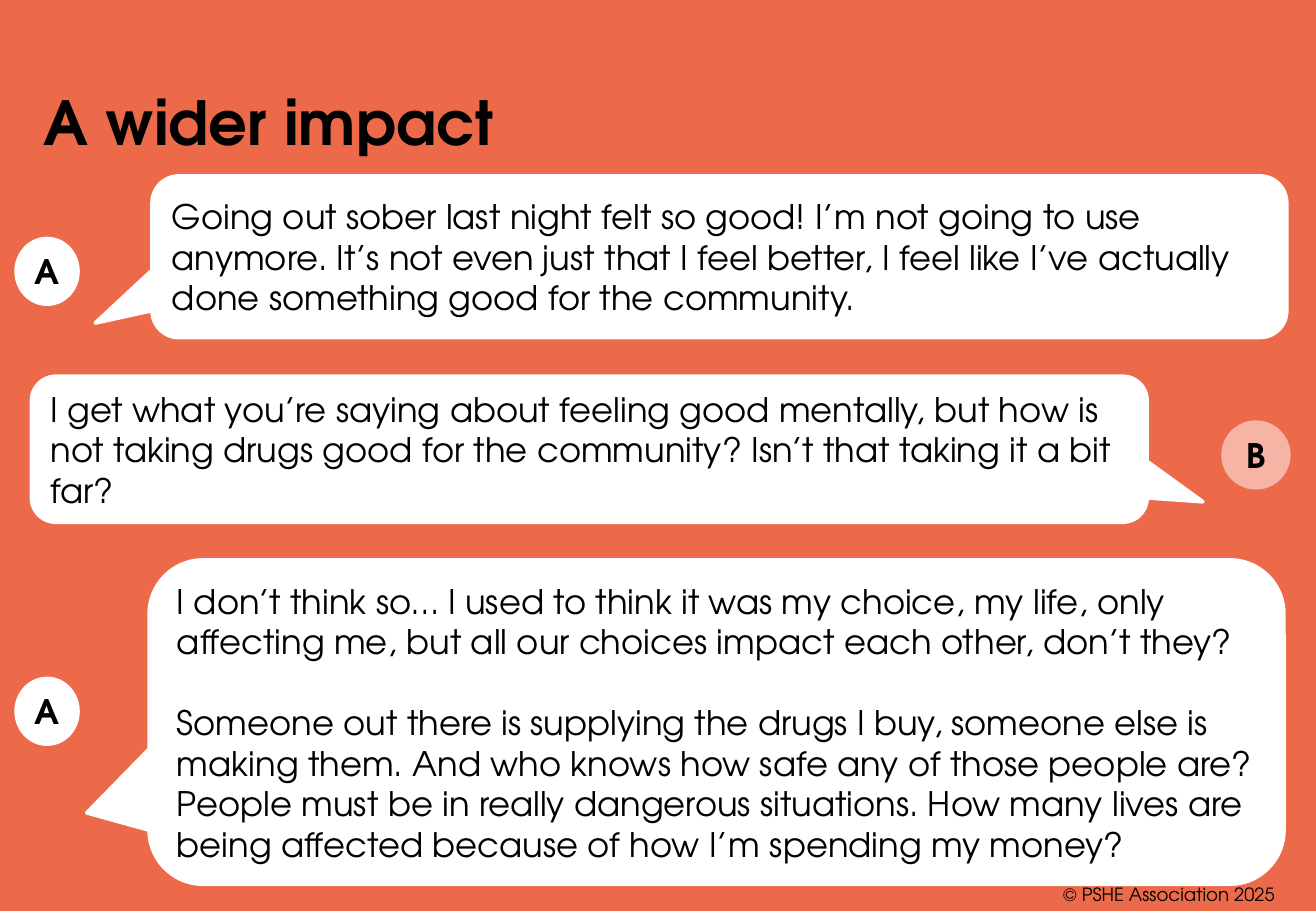
"""Build the slide "A wider impact", a talk between A and B in speech bubbles."""
from dataclasses import dataclass

import pptx
import pptx.dml.color
import pptx.enum.shapes
import pptx.enum.text
import pptx.util

Cm = pptx.util.Cm
Pt = pptx.util.Pt
RGBColor = pptx.dml.color.RGBColor
Kind = pptx.enum.shapes.MSO_SHAPE
Align = pptx.enum.text.PP_ALIGN
Anchor = pptx.enum.text.MSO_ANCHOR

FONT = "TeX Gyre Adventor"
ORANGE = RGBColor(0xEC, 0x69, 0x4A)
PINK = RGBColor(0xF6, 0xB4, 0xA5)
WHITE = RGBColor(0xFF, 0xFF, 0xFF)
BLACK = RGBColor(0x00, 0x00, 0x00)


@dataclass(frozen=True)
class Box:
    left: float
    top: float
    width: float
    height: float

    def frame(self) -> tuple:
        return Cm(self.left), Cm(self.top), Cm(self.width), Cm(self.height)


@dataclass(frozen=True)
class Bubble:
    box: Box
    tip: tuple[float, float]
    lines: tuple[str, ...]


@dataclass(frozen=True)
class Badge:
    box: Box
    name: str
    fill: RGBColor


BUBBLES = (
    Bubble(Box(3.18, 3.68, 23.72, 3.38), (-0.55, 0.41), (
        "Going out sober last night felt so good! I’m not going to use anymore. "
        "It’s not even just that I feel better, I feel like I’ve actually done "
        "something good for the community.",
    )),
    Bubble(Box(0.66, 7.87, 23.32, 3.05), (0.55, 0.36), (
        "I get what you’re saying about feeling good mentally, but how is not "
        "taking drugs good for the community? Isn’t that taking it a bit far?",
    )),
    Bubble(Box(3.12, 11.71, 23.72, 6.78), (-0.555, 0.28), (
        "I don’t think so… I used to think it was my choice, my life, only "
        "affecting me, but all our choices impact each other, don’t they?",
        "Someone out there is supplying the drugs I buy, someone else is making "
        "them. And who knows how safe any of those people are? People must be in "
        "really dangerous situations. How many lives are being affected because "
        "of how I’m spending my money?",
    )),
)
BADGES = (
    Badge(Box(0.3, 4.95, 1.37, 1.45), "A", WHITE),
    Badge(Box(25.53, 8.79, 1.45, 1.45), "B", PINK),
    Badge(Box(0.3, 14.15, 1.37, 1.45), "A", WHITE),
)


def write(shape, *lines: str, size: float = 20, bold: bool = False,
          align=Align.LEFT, anchor=Anchor.MIDDLE, gap: float = 24,
          pitch: float | None = None) -> None:
    frame = shape.text_frame
    frame.word_wrap = True
    frame.auto_size = pptx.enum.text.MSO_AUTO_SIZE.NONE
    frame.vertical_anchor = anchor
    for place, line in enumerate(lines):
        para = frame.add_paragraph() if place else frame.paragraphs[0]
        para.alignment = align
        para.space_before = Pt(gap if place else 0)
        if pitch:
            para.line_spacing = Pt(pitch)
        run = para.add_run()
        run.text = line
        run.font.name = FONT
        run.font.size = Pt(size)
        run.font.bold = bold
        run.font.color.rgb = BLACK


def add_form(slide, kind, box: Box, fill: RGBColor):
    shape = slide.shapes.add_shape(kind, *box.frame())
    shape.shadow.inherit = False
    shape.fill.solid()
    shape.fill.fore_color.rgb = fill
    shape.line.fill.background()
    return shape


def draw_bubble(slide, bubble: Bubble) -> None:
    shape = add_form(slide, Kind.ROUNDED_RECTANGULAR_CALLOUT, bubble.box, WHITE)
    shape.line.color.rgb = WHITE
    shape.line.width = Pt(2.25)
    shape.adjustments[0], shape.adjustments[1] = bubble.tip
    write(shape, *bubble.lines)


def draw_badge(slide, badge: Badge) -> None:
    shape = add_form(slide, Kind.OVAL, badge.box, badge.fill)
    frame = shape.text_frame
    frame.margin_left = frame.margin_right = 0
    write(shape, badge.name, bold=True, align=Align.CENTER)


def main() -> None:
    deck = pptx.Presentation()
    deck.slide_width, deck.slide_height = Cm(27.51), Cm(19.05)
    slide = deck.slides.add_slide(deck.slide_layouts[5])
    slide.background.fill.solid()
    slide.background.fill.fore_color.rgb = ORANGE

    title = slide.shapes.title
    place = Box(0.66, 1.5, 13.56, 1.93)
    title.left, title.top, title.width, title.height = place.frame()
    write(title, "A wider impact", size=36, bold=True,
          anchor=Anchor.BOTTOM, pitch=43)

    for bubble in BUBBLES:
        draw_bubble(slide, bubble)
    for badge in BADGES:
        draw_badge(slide, badge)

    credit = slide.shapes.add_textbox(*Box(20.7, 18.34, 6.2, 0.7).frame())
    write(credit, "© PSHE Association 2025", size=10.8, align=Align.RIGHT)
    deck.save("out.pptx")


if __name__ == "__main__":
    main()
